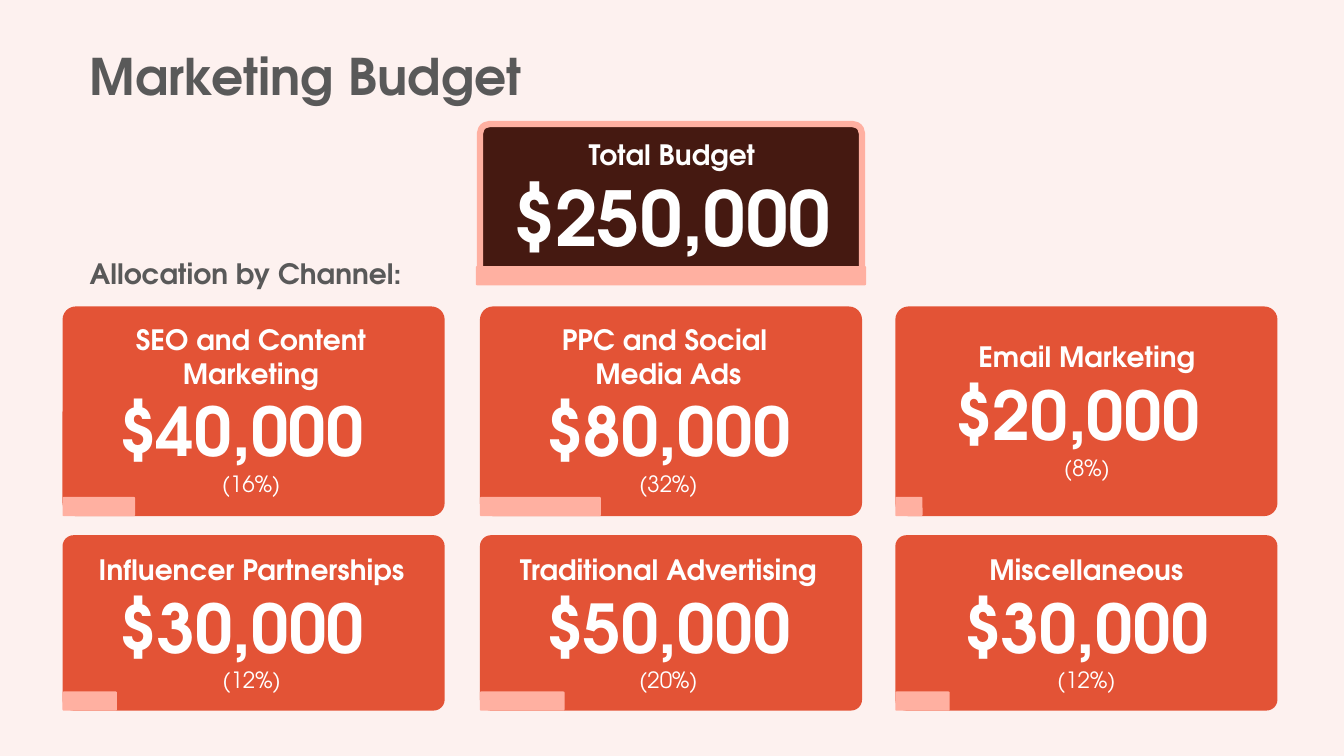
from pptx import Presentation
from pptx import util as u
from pptx.dml.color import RGBColor
from pptx.enum import shapes, text

BLUSH = RGBColor(0xFD, 0xF1, 0xEF)
ORANGE = RGBColor(0xE3, 0x53, 0x36)
PINK = RGBColor(0xFF, 0xB0, 0xA1)
MAROON = RGBColor(0x45, 0x19, 0x11)
GRAY = RGBColor(0x59, 0x59, 0x59)
WHITE = RGBColor(0xFF, 0xFF, 0xFF)

FRAME_FORMAT = {
    "word_wrap": True,
    "auto_size": text.MSO_AUTO_SIZE.SHAPE_TO_FIT_TEXT,
    "vertical_anchor": text.MSO_ANCHOR.TOP,
    "margin_left": u.Inches(0.1),
    "margin_right": u.Inches(0.1),
    "margin_top": u.Inches(0.05),
    "margin_bottom": u.Inches(0.05),
}


def write(box, place, lines, color, align):
    box.left, box.top, box.width, box.height = map(u.Inches, place)
    frame = box.text_frame
    for name, value in FRAME_FORMAT.items():
        setattr(frame, name, value)
    for index, (words, size, bold) in enumerate(lines):
        para = frame.add_paragraph() if index else frame.paragraphs[0]
        para.text = words
        para.alignment = align
        span_format = {"name": "TeX Gyre Adventor", "size": u.Pt(size), "bold": bold}
        for span in para.runs:
            for name, value in span_format.items():
                setattr(span.font, name, value)
            span.font.color.rgb = color


def add_panel(place, color):
    panel = page.shapes.add_shape(
        shapes.MSO_SHAPE.ROUNDED_RECTANGLE, *map(u.Inches, place))
    panel.adjustments[0] = 0.063
    panel.shadow.inherit = False
    panel.fill.solid()
    panel.fill.fore_color.rgb = color
    panel.line.fill.background()
    return panel


deck = Presentation()
deck.slide_width, deck.slide_height = u.Inches(13.33), u.Inches(7.5)
page = deck.slides.add_slide(deck.slide_layouts.get_by_name("Title Only"))
page.background.fill.solid()
page.background.fill.fore_color.rgb = BLUSH

LEFT, CENTER = text.PP_ALIGN.LEFT, text.PP_ALIGN.CENTER
write(page.shapes.title, (0.79, 0.4, 9.3, 0.71),
      [("Marketing Budget", 36, True)], GRAY, LEFT)

columns = [0.62, 4.76, 8.88]
rows = [(3.04, 2.08), (5.31, 1.74)]
card_width, bar_height = 3.79, 0.19

channels = [
    ("SEO and Content Marketing", "$40,000 ", "(16%)", 0.72, (0.79, 3.15, 3.4, 1.85)),
    ("PPC and Social \vMedia Ads", "$80,000", "(32%)", 1.2, (4.95, 3.15, 3.36, 1.85)),
    ("Email Marketing", "$20,000 ", "(8%)", 0.27, (9.15, 3.32, 3.26, 1.51)),
    ("Influencer Partnerships", "$30,000 ", "(12%)", 0.54, (0.84, 5.43, 3.31, 1.51)),
    ("Traditional Advertising", "$50,000", "(20%)", 0.84, (4.95, 5.43, 3.36, 1.51)),
    ("Miscellaneous", "$30,000", "(12%)", 0.54, (9.09, 5.43, 3.37, 1.51)),
]
for index, (channel, amount, share, bar_width, place) in enumerate(channels):
    left = columns[index % 3]
    top, height = rows[index // 3]
    add_panel((left, top, card_width, height), ORANGE)
    box = page.shapes.add_textbox(0, 0, 0, 0)
    write(box, place, [(channel, 20, True), (amount, 48, True), (share, 16, False)],
          WHITE, CENTER)
    add_panel((left, top + height - bar_height, bar_width, bar_height), PINK)

total = add_panel((columns[1], 1.23, card_width, 1.54), MAROON)
total.line.color.rgb = PINK
total.line.width = u.Pt(4.5)
box = page.shapes.add_textbox(0, 0, 0, 0)
write(box, (4.98, 1.31, 3.37, 1.35),
      [("Total Budget", 20, True), ("$250,000", 54, True)], WHITE, CENTER)
add_panel((4.72, 2.64, 3.87, bar_height), PINK)

box = page.shapes.add_textbox(0, 0, 0, 0)
write(box, (0.79, 2.5, 3.62, 0.44), [("Allocation by Channel:", 20, True)], GRAY, LEFT)

deck.save("out.pptx")
